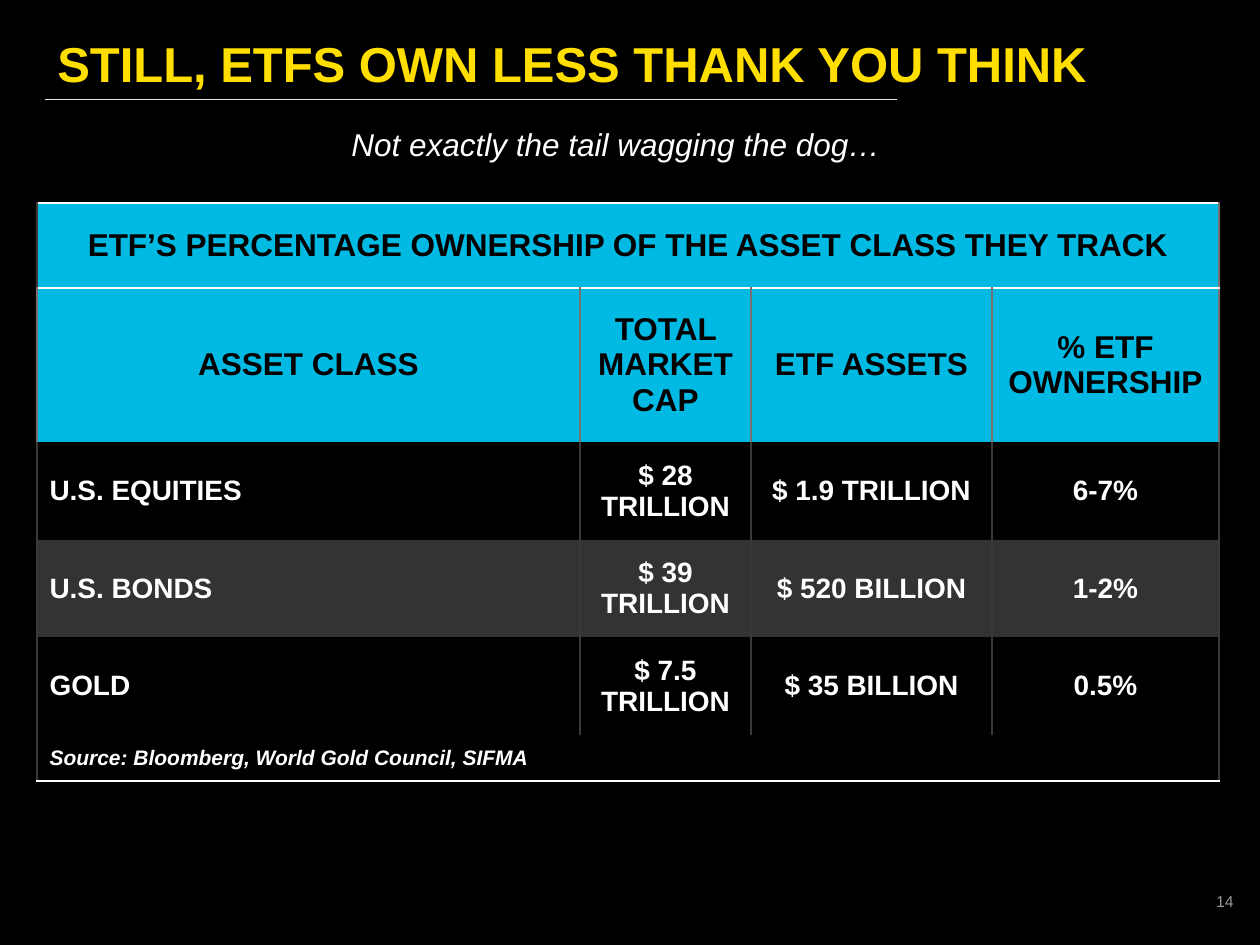
"""Build the slide on how little of each asset class ETFs own."""
from dataclasses import dataclass

import lxml.etree
import pptx
import pptx.dml.color
import pptx.enum.shapes
import pptx.enum.text
import pptx.oxml.ns
import pptx.util

RGB = pptx.dml.color.RGBColor
ALIGN = pptx.enum.text.PP_ALIGN
ANCHOR = pptx.enum.text.MSO_ANCHOR
qn = pptx.oxml.ns.qn

EMU_PER_PX = 914400 / 126
BLACK = RGB(0x00, 0x00, 0x00)
WHITE = RGB(0xFF, 0xFF, 0xFF)
YELLOW = RGB(0xFF, 0xDE, 0x00)
CYAN = RGB(0x00, 0xBA, 0xE3)
PALE = RGB(0xE7, 0xE6, 0xE6)
GREY = RGB(0x98, 0x98, 0x98)
HEADER_EDGE = RGB(0x76, 0x71, 0x71)
BODY_EDGE = RGB(0x3B, 0x38, 0x38)
NO_STYLE = "{2D5ABB26-0587-4C30-8999-92F81FD0307C}"
COLUMN_WIDTHS = (543, 171, 241, 227)


@dataclass(frozen=True)
class TextStyle:
    size: int
    color: RGB
    bold: bool = False
    italic: bool = False


@dataclass(frozen=True)
class Label:
    text: str
    left: int
    top: int
    width: int
    height: int
    style: TextStyle
    align: ALIGN = ALIGN.LEFT
    anchor: ANCHOR = ANCHOR.TOP
    line_spacing: float = 1.0


@dataclass(frozen=True)
class TableRow:
    height: int
    texts: tuple[str, ...]
    style: TextStyle
    fill: RGB
    opacity: int = 100
    first_align: ALIGN = ALIGN.LEFT
    left_edge: RGB = BODY_EDGE
    right_edge: RGB = BODY_EDGE
    top_edge: RGB | None = None
    bottom_edge: RGB | None = None


HEADING = TextStyle(18, BLACK, bold=True)
BODY = TextStyle(16, WHITE, bold=True)
SOURCE = TextStyle(12, WHITE, bold=True, italic=True)

LABELS = (
    Label("STILL, ETFS OWN LESS THANK YOU THINK", 45, 50, 1129, 49,
          TextStyle(28, YELLOW, bold=True), anchor=ANCHOR.BOTTOM, line_spacing=0.9),
    Label("Not exactly the tail wagging the dog…", 339, 119, 814, 50,
          TextStyle(18, WHITE, italic=True)),
    Label("14", 963, 876, 283, 50, TextStyle(9, GREY), ALIGN.RIGHT, ANCHOR.MIDDLE),
)

ROWS = (
    TableRow(85, ("ETF’S PERCENTAGE OWNERSHIP OF THE ASSET CLASS THEY TRACK",),
             HEADING, CYAN, first_align=ALIGN.CENTER, right_edge=HEADER_EDGE,
             top_edge=WHITE, bottom_edge=WHITE),
    TableRow(154, ("ASSET CLASS", "TOTAL MARKET CAP", "ETF ASSETS", "% ETF OWNERSHIP"),
             HEADING, CYAN, first_align=ALIGN.CENTER,
             left_edge=HEADER_EDGE, right_edge=HEADER_EDGE),
    TableRow(98, ("U.S. EQUITIES", "$ 28 TRILLION", "$ 1.9 TRILLION", "6-7%"),
             BODY, BLACK, 20),
    TableRow(97, ("U.S. BONDS", "$ 39 TRILLION", "$ 520 BILLION", "1-2%"),
             BODY, WHITE, 20),
    TableRow(98, ("GOLD", "$ 7.5 TRILLION", "$ 35 BILLION", "0.5%"),
             BODY, BLACK, 20),
    TableRow(46, ("Source: Bloomberg, World Gold Council, SIFMA",),
             SOURCE, BLACK, 20, bottom_edge=WHITE),
)


def px(length: int) -> int:
    return round(length * EMU_PER_PX)


def write_text(frame, text: str, style: TextStyle, align: ALIGN) -> None:
    para = frame.paragraphs[0]
    para.alignment = align
    span = para.add_run()
    span.text = text
    span.font.name = "Arial"
    span.font.size = pptx.util.Pt(style.size)
    span.font.bold = style.bold
    span.font.italic = style.italic
    span.font.color.rgb = style.color


def add_label(page, label: Label) -> None:
    box = page.shapes.add_textbox(
        px(label.left), px(label.top), px(label.width), px(label.height))
    frame = box.text_frame
    frame.word_wrap = True
    frame.vertical_anchor = label.anchor
    write_text(frame, label.text, label.style, label.align)
    frame.paragraphs[0].line_spacing = label.line_spacing


def add_title_rule(page) -> None:
    rule = page.shapes.add_connector(
        pptx.enum.shapes.MSO_CONNECTOR.STRAIGHT, px(45), px(99), px(897), px(99))
    rule.line.color.rgb = PALE
    rule.line.width = pptx.util.Pt(0.5)
    lxml.etree.SubElement(rule._element.spPr, qn("a:effectLst"))


def add_edge(properties, side: str, color: RGB) -> None:
    edge = lxml.etree.SubElement(
        properties, qn(f"a:ln{side}"), w=str(pptx.util.Pt(1)))
    fill = lxml.etree.SubElement(edge, qn("a:solidFill"))
    lxml.etree.SubElement(fill, qn("a:srgbClr"), val=str(color))


def fill_cell(cell, text: str, row: TableRow, align: ALIGN) -> None:
    write_text(cell.text_frame, text, row.style, align)
    cell.vertical_anchor = ANCHOR.MIDDLE
    properties = cell._tc.get_or_add_tcPr()
    edges = {"L": row.left_edge, "R": row.right_edge,
             "T": row.top_edge, "B": row.bottom_edge}
    for side, color in edges.items():
        if color is not None:
            add_edge(properties, side, color)
    cell.fill.solid()
    cell.fill.fore_color.rgb = row.fill
    if row.opacity < 100:
        shade = properties.find(f"{qn('a:solidFill')}/{qn('a:srgbClr')}")
        lxml.etree.SubElement(shade, qn("a:alpha"), val=str(row.opacity * 1000))


def add_ownership_table(page) -> None:
    graphic = page.shapes.add_table(
        len(ROWS), len(COLUMN_WIDTHS), px(37), px(203),
        px(sum(COLUMN_WIDTHS)), px(sum(row.height for row in ROWS)))
    table = graphic.table
    table.first_row = False
    table.horz_banding = False
    table._tbl.tblPr.find(qn("a:tableStyleId")).text = NO_STYLE
    for column, width in zip(table.columns, COLUMN_WIDTHS):
        column.width = px(width)
    for row_index, row in enumerate(ROWS):
        table.rows[row_index].height = px(row.height)
        if len(row.texts) == 1:
            last_cell = table.cell(row_index, len(COLUMN_WIDTHS) - 1)
            table.cell(row_index, 0).merge(last_cell)
        for column_index, text in enumerate(row.texts):
            align = ALIGN.CENTER if column_index else row.first_align
            fill_cell(table.cell(row_index, column_index), text, row, align)


def main() -> None:
    deck = pptx.Presentation()
    deck.slide_width = px(1260)
    deck.slide_height = px(945)
    page = deck.slides.add_slide(deck.slide_layouts[6])
    page.background.fill.solid()
    page.background.fill.fore_color.rgb = BLACK
    add_title_rule(page)
    add_ownership_table(page)
    for label in LABELS:
        add_label(page, label)
    deck.save("out.pptx")


if __name__ == "__main__":
    main()
